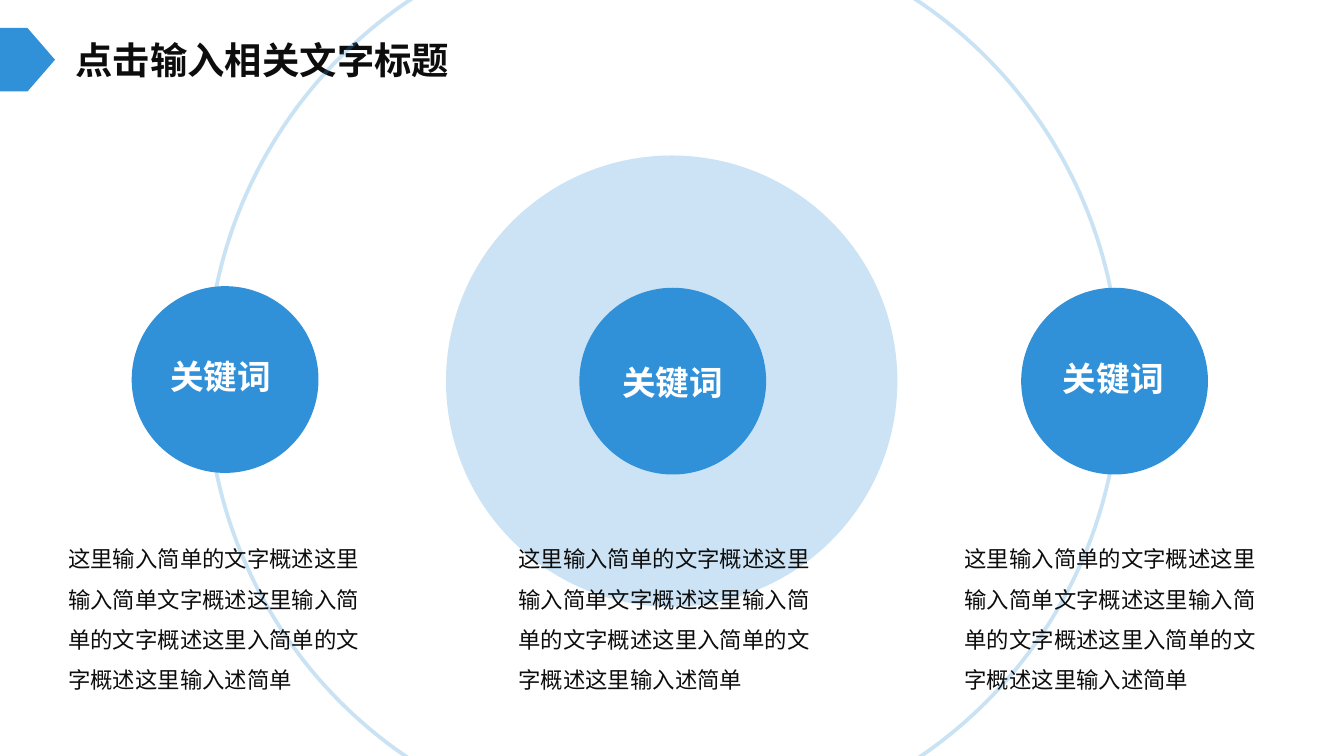
from lxml import etree
from pptx import Presentation
from pptx.dml.color import RGBColor
from pptx.enum.shapes import MSO_SHAPE
from pptx.enum.text import MSO_ANCHOR, MSO_AUTO_SIZE, PP_ALIGN
from pptx.oxml.ns import qn
from pptx.util import Cm, Pt

ELLIPSE, PENTAGON = MSO_SHAPE.OVAL, MSO_SHAPE.PENTAGON
TOP, LEFT, GROW = MSO_ANCHOR.TOP, PP_ALIGN.LEFT, MSO_AUTO_SIZE.SHAPE_TO_FIT_TEXT
COLORS = {"blue": "3090D8", "ink": "0D0D0D", "white": "FFFFFF"}
TITLE_ONLY = 5

SUMMARY = (
    "这里输入简单的文字概述这里输入简单文字概述这里输入简单的文字概述"
    "这里入简单的文字概述这里输入述简单"
)
CIRCLE_SIZE = 3.53
COLUMNS = [
    {"circle": (2.49, 5.41), "keyword": (2.97, 6.6), "summary": 1.04},
    {"circle": (10.95, 5.44), "keyword": (11.51, 6.71), "summary": 9.55},
    {"circle": (19.3, 5.44), "keyword": (19.84, 6.65), "summary": 17.98},
]


def write_text(frame, text, size=12, font="Calibri", color="ink", bold=False,
               spacing=None, wrap=True):
    frame.word_wrap = wrap
    frame.auto_size = GROW
    frame.vertical_anchor = TOP
    paragraph = frame.paragraphs[0]
    paragraph.alignment = LEFT
    if spacing:
        paragraph.line_spacing = spacing
    run = paragraph.add_run()
    run.text = text
    run.font.size = Pt(size)
    run.font.bold = bold
    run.font.color.rgb = RGBColor.from_string(COLORS[color])
    run.font.name = font
    east_asian = etree.SubElement(run.font._element, qn("a:ea"))
    east_asian.set("typeface", font)


class SlideBuilder:
    def __init__(self, slide):
        self.slide = slide

    def paint(self, fill, color, opacity):
        fill.solid()
        fill.fore_color.rgb = RGBColor.from_string(COLORS[color])
        if opacity < 100:
            rgb = fill._xPr.find(qn("a:solidFill"))[0]
            etree.SubElement(rgb, qn("a:alpha")).set("val", str(opacity * 1000))

    def title(self, text, left, top, width, height, **style):
        heading = self.slide.shapes.title
        heading.left, heading.top = Cm(left), Cm(top)
        heading.width, heading.height = Cm(width), Cm(height)
        write_text(heading.text_frame, text, **style)

    def text(self, text, left, top, width, height, **style):
        box = self.slide.shapes.add_textbox(Cm(left), Cm(top), Cm(width), Cm(height))
        write_text(box.text_frame, text, **style)

    def shape(self, kind, left, top, width, height, color="blue", opacity=100):
        figure = self.slide.shapes.add_shape(
            kind, Cm(left), Cm(top), Cm(width), Cm(height))
        figure.shadow.inherit = False
        self.paint(figure.fill, color, opacity)
        figure.line.fill.background()

    def ring(self, left, top, size, weight, color="blue", opacity=100):
        outline = self.slide.shapes.add_shape(
            ELLIPSE, Cm(left), Cm(top), Cm(size), Cm(size))
        outline.shadow.inherit = False
        outline.fill.background()
        outline.line.width = Pt(weight)
        self.paint(outline.line.fill, color, opacity)


def main():
    deck = Presentation()
    deck.slide_width, deck.slide_height = Cm(25.4), Cm(14.29)
    builder = SlideBuilder(deck.slides.add_slide(deck.slide_layouts[TITLE_ONLY]))

    builder.title("点击输入相关文字标题", 1.17, 0.58, 7.65, 1.12, size=20,
                  font="Noto Sans CJK SC", bold=True, wrap=False)
    builder.shape(PENTAGON, 0, 0.53, 1.04, 1.2)
    builder.ring(3.91, -1.45, 17.25, weight=2, opacity=25)
    builder.shape(ELLIPSE, 8.43, 2.94, 8.53, 8.53, opacity=25)

    for column in COLUMNS:
        builder.shape(ELLIPSE, *column["circle"], CIRCLE_SIZE, CIRCLE_SIZE)
        builder.text("关键词", *column["keyword"], 2.59, 1.02,
                     size=18, color="white", bold=True)
        builder.text(SUMMARY, column["summary"], 9.93, 6.3, 3.33, spacing=1.5)

    deck.save("out.pptx")


if __name__ == "__main__":
    main()
